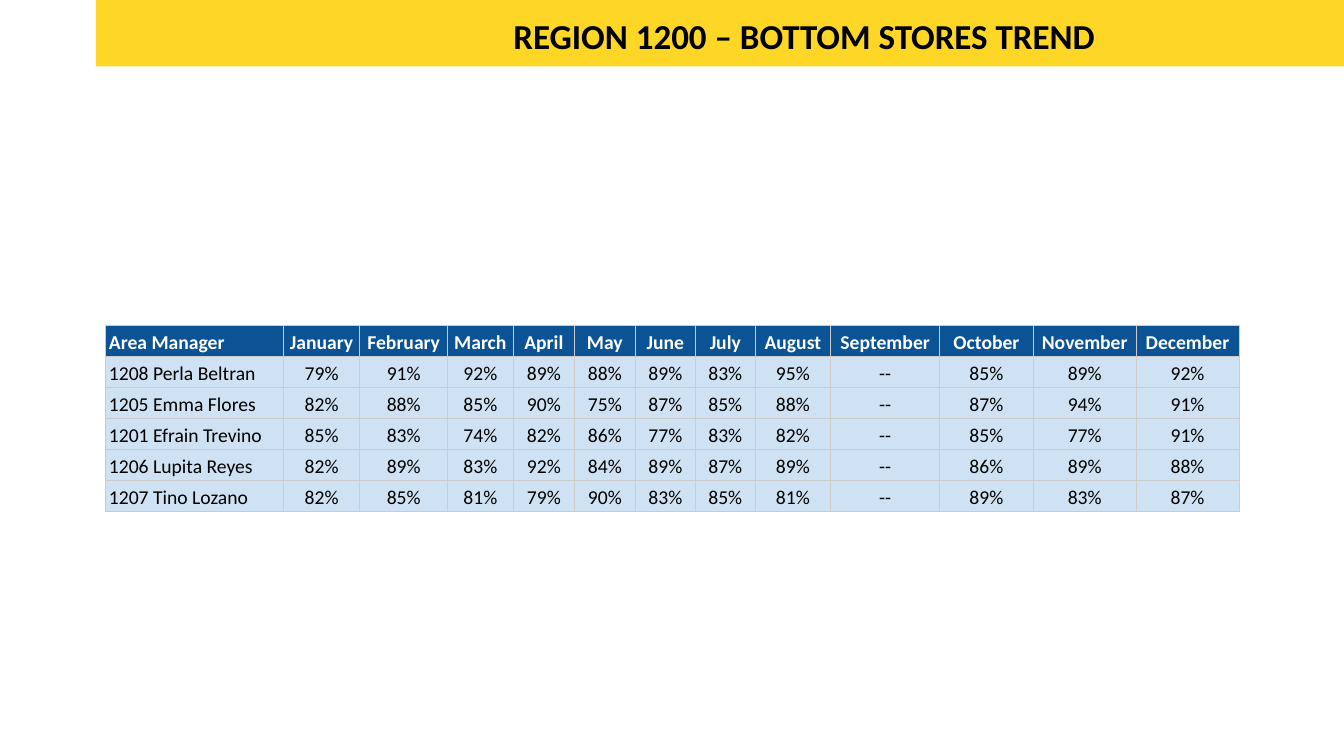
from lxml import etree
from pptx import Presentation
from pptx.dml.color import RGBColor
from pptx.enum.shapes import MSO_SHAPE as Shape
from pptx.enum.text import MSO_ANCHOR as Anchor, PP_ALIGN as Align
from pptx.oxml.ns import qn
from pptx.util import Inches, Pt

TITLE = "REGION 1200 – BOTTOM STORES TREND"
COLUMNS = [
    ("Area Manager", 1.76), ("January", 0.76), ("February", 0.87),
    ("March", 0.65), ("April", 0.61), ("May", 0.6), ("June", 0.6),
    ("July", 0.59), ("August", 0.75), ("September", 1.08),
    ("October", 0.93), ("November", 1.02), ("December", 1.02),
]
# Percent per month; None where no score was recorded
SCORES = {
    "1208 Perla Beltran": [79, 91, 92, 89, 88, 89, 83, 95, None, 85, 89, 92],
    "1205 Emma Flores": [82, 88, 85, 90, 75, 87, 85, 88, None, 87, 94, 91],
    "1201 Efrain Trevino": [85, 83, 74, 82, 86, 77, 83, 82, None, 85, 77, 91],
    "1206 Lupita Reyes": [82, 89, 83, 92, 84, 89, 87, 89, None, 86, 89, 88],
    "1207 Tino Lozano": [82, 85, 81, 79, 90, 83, 85, 81, None, 89, 83, 87],
}

YELLOW = RGBColor(0xFE, 0xD7, 0x26)
NAVY = RGBColor(0x0B, 0x53, 0x94)
PALE_BLUE = RGBColor(0xCF, 0xE2, 0xF3)
GRID_GRAY = RGBColor(0xCC, 0xCC, 0xCC)
BLACK = RGBColor(0, 0, 0)
WHITE = RGBColor(255, 255, 255)

FONT = "Calibri"
ROW_HEIGHT = 0.28
CELL_FORMAT = {
    "vertical_anchor": Anchor.BOTTOM,
    "margin_left": Inches(0.03), "margin_right": Inches(0.03),
    "margin_top": Inches(0.02), "margin_bottom": Inches(0.02),
}


def set_all(target, values):
    for name, value in values.items():
        setattr(target, name, value)


def write(paragraph, text, size, color, bold, align):
    run = paragraph.add_run()
    run.text = text
    set_all(run.font, {"name": FONT, "size": Pt(size), "bold": bold})
    run.font.color.rgb = color
    paragraph.alignment = align


def add_borders(cell):
    """Draw the grid line on all four sides; call before filling the cell."""
    properties = cell._tc.get_or_add_tcPr()
    for side in ("lnL", "lnR", "lnT", "lnB"):
        line = etree.SubElement(properties, qn(f"a:{side}"), w=str(Pt(0.75)))
        fill = etree.SubElement(line, qn("a:solidFill"))
        etree.SubElement(fill, qn("a:srgbClr"), val=str(GRID_GRAY))


def add_banner(slide):
    banner = slide.shapes.add_shape(
        Shape.RECTANGLE, Inches(0.95), 0, Inches(12.38), Inches(0.66))
    banner.shadow.inherit = False
    banner.fill.solid()
    banner.fill.fore_color.rgb = YELLOW
    banner.line.fill.background()

    title = slide.shapes.add_textbox(
        Inches(2.61), Inches(0.09), Inches(10.73), Inches(0.52)).text_frame
    title.word_wrap = True
    write(title.paragraphs[0], TITLE, 25, BLACK, True, Align.CENTER)


def add_score_table(slide):
    headings, widths = zip(*COLUMNS)
    rows = [headings]
    for manager, scores in SCORES.items():
        rows.append([manager] + ["--" if s is None else f"{s}%" for s in scores])

    table = slide.shapes.add_table(
        len(rows), len(widths), Inches(1.05), Inches(3.23),
        Inches(sum(widths)), Inches(ROW_HEIGHT * len(rows))).table
    table.horz_banding = False
    for column, width in zip(table.columns, widths):
        column.width = Inches(width)

    for r, texts in enumerate(rows):
        is_header = r == 0
        table.rows[r].height = Inches(ROW_HEIGHT)
        for c, text in enumerate(texts):
            cell = table.cell(r, c)
            set_all(cell, CELL_FORMAT)
            add_borders(cell)
            cell.fill.solid()
            cell.fill.fore_color.rgb = NAVY if is_header else PALE_BLUE
            paragraph = cell.text_frame.paragraphs[0]
            paragraph.line_spacing = 1.15
            write(paragraph, text, 14, WHITE if is_header else BLACK,
                  is_header, Align.CENTER if c else Align.LEFT)


def main():
    deck = Presentation()
    deck.slide_width, deck.slide_height = Inches(13.33), Inches(7.5)
    slide = deck.slides.add_slide(deck.slide_layouts[6])
    add_banner(slide)
    add_score_table(slide)
    deck.save("out.pptx")


if __name__ == "__main__":
    main()
